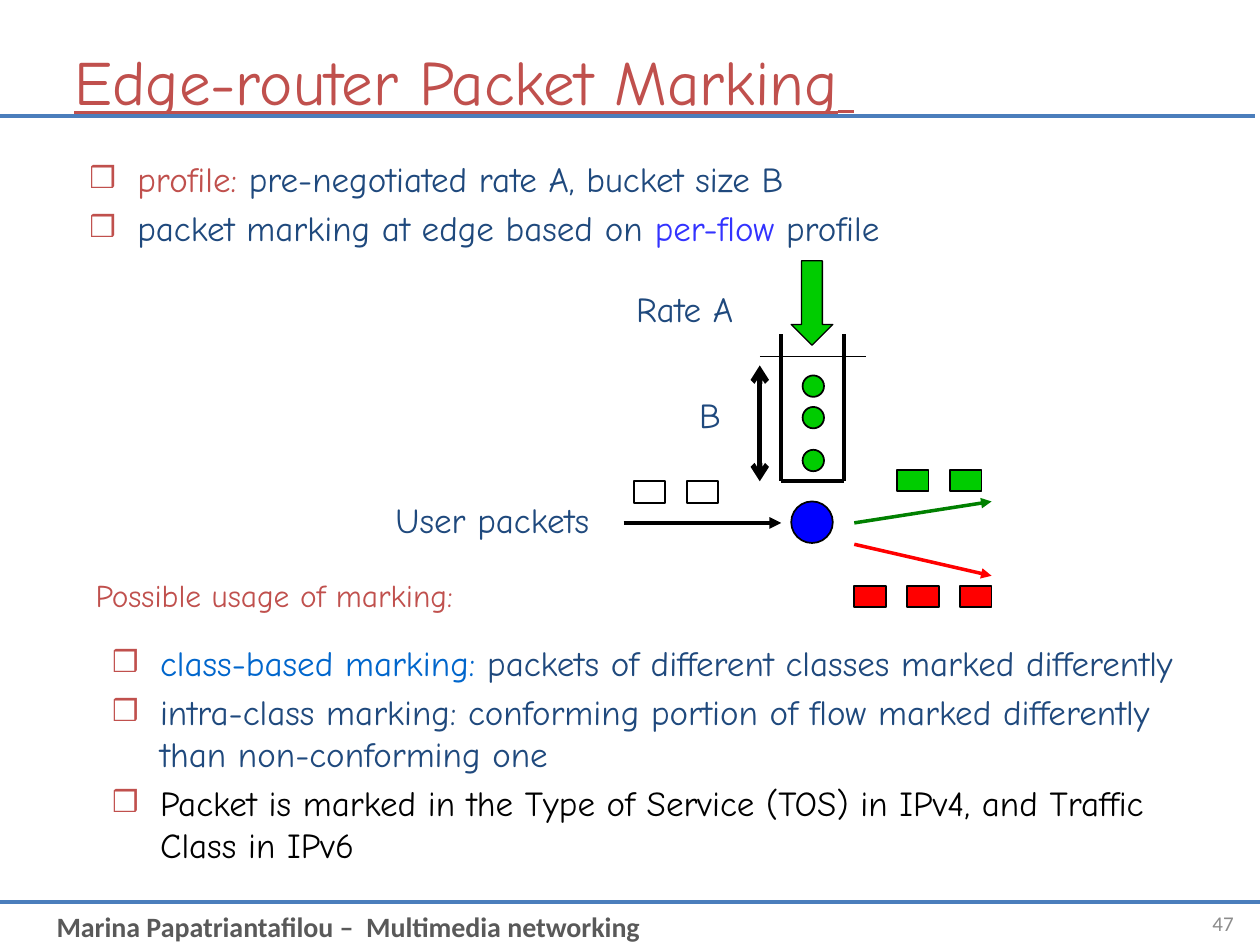
from dataclasses import dataclass

from lxml import etree
from pptx import Presentation
from pptx import util as u
from pptx.dml.color import RGBColor
from pptx.enum import shapes, text
from pptx.oxml import ns

HAND_FONT = "Comic Neue"
NAVY, BRICK, RULE_BLUE = "1F497D", "C0504D", "4B7EBC"
BLACK, GREEN, RED = "000000", "00CC00", "FF0000"
TWO_CONTENT_LAYOUT = 3


@dataclass
class Run:
    text: str
    color: str = NAVY
    size: float = 20
    font: str = HAND_FONT
    bold: bool = False
    underline: bool = False


@dataclass
class Label:
    box: tuple
    run: Run
    align: text.PP_ALIGN = text.PP_ALIGN.LEFT
    anchor: text.MSO_ANCHOR = text.MSO_ANCHOR.TOP


@dataclass
class Line:
    start: tuple
    end: tuple
    color: str = BLACK
    width: float = 2.25
    head: str = ""
    tail: str = ""


@dataclass
class PacketRow:
    left: float
    top: float
    count: int
    color: str


def rgb(color: str) -> RGBColor:
    return RGBColor.from_string(color)


def place(shape, box: tuple) -> None:
    shape.left, shape.top, shape.width, shape.height = map(u.Inches, box)


def add_run(paragraph, item: Run) -> None:
    run = paragraph.add_run()
    run.text = item.text
    run.font.name = item.font
    run.font.size = u.Pt(item.size)
    run.font.bold = item.bold
    run.font.underline = item.underline
    run.font.color.rgb = rgb(item.color)


def add_label(slide, label: Label) -> None:
    frame = slide.shapes.add_textbox(*map(u.Inches, label.box)).text_frame
    frame.word_wrap = True
    frame.vertical_anchor = label.anchor
    frame.paragraphs[0].alignment = label.align
    add_run(frame.paragraphs[0], label.run)


def add_bullet(paragraph) -> None:
    properties = paragraph._p.get_or_add_pPr()
    indent = u.Inches(0.38)
    properties.set("marL", str(indent))
    properties.set("indent", str(-indent))
    color = etree.SubElement(properties, ns.qn("a:buClr"))
    etree.SubElement(color, ns.qn("a:srgbClr"), val=BRICK)
    etree.SubElement(properties, ns.qn("a:buSzPct"), val="85000")
    etree.SubElement(properties, ns.qn("a:buChar"), char="❒")


def fill_list(placeholder, box: tuple, items: list) -> None:
    place(placeholder, box)
    frame = placeholder.text_frame
    frame.auto_size = text.MSO_AUTO_SIZE.NONE
    for index, runs in enumerate(items):
        paragraph = frame.add_paragraph() if index else frame.paragraphs[0]
        paragraph.space_before = u.Pt(4)
        add_bullet(paragraph)
        for run in runs:
            add_run(paragraph, run)


def add_line(slide, line: Line) -> None:
    connector = slide.shapes.add_connector(
        shapes.MSO_CONNECTOR.STRAIGHT, *map(u.Inches, line.start + line.end))
    connector.line.color.rgb = rgb(line.color)
    connector.line.width = u.Pt(line.width)
    outline = connector.line._get_or_add_ln()
    for tag, kind in (("a:headEnd", line.head), ("a:tailEnd", line.tail)):
        if kind:
            etree.SubElement(outline, ns.qn(tag), type=kind)
    etree.SubElement(connector._element.spPr, ns.qn("a:effectLst"))


def add_figure(slide, kind, box: tuple, color: str, width: float = 1) -> None:
    shape = slide.shapes.add_shape(kind, *map(u.Inches, box))
    shape.shadow.inherit = False
    shape.fill.solid()
    shape.fill.fore_color.rgb = rgb(color)
    shape.line.color.rgb = rgb(BLACK)
    shape.line.width = u.Pt(width)


TOP_ITEMS = [
    [Run("profile: ", BRICK), Run("pre-negotiated rate A, bucket size B")],
    [Run("packet marking at edge based on "), Run("per-flow", "3333FF"), Run(" profile")],
]
USAGE_ITEMS = [
    [Run("class-based marking:", "0066CC"),
     Run(" packets of different classes marked differently")],
    [Run("intra-class marking: conforming portion of flow marked differently "
         "than non-conforming one")],
    [Run("Packet is marked in the Type of Service (TOS) in IPv4, and Traffic "
         "Class in IPv6", BLACK)],
]
LABELS = [
    Label((0.35, 7.17, 9.25, 0.37),
          Run("Marina Papatriantafilou –  Multimedia networking", "595959", 16, "Calibri", True)),
    Label((9.09, 7.13, 0.8, 0.4), Run("47", "8C8C8C", 12, "Calibri"),
          text.PP_ALIGN.RIGHT, text.MSO_ANCHOR.MIDDLE),
    Label((0.66, 4.52, 4.92, 0.5), Run("Possible usage of marking:", BRICK, 18)),
    Label((3.04, 3.91, 2.33, 0.43), Run("User packets")),
    Label((4.95, 2.23, 1.25, 0.43), Run("Rate A")),
    Label((5.45, 3.07, 0.38, 0.43), Run("B")),
]
RULES = [
    Line((0, 7.16), (10, 7.16), RULE_BLUE),
    Line((-0.04, 0.92), (9.96, 0.92), RULE_BLUE),
]
BUCKET_LEFT, BUCKET_RIGHT, BUCKET_BOTTOM = 6.2, 6.7, 3.82
BUCKET_SIDES = [
    Line((x, start), (x, end), width=width)
    for x in (BUCKET_LEFT, BUCKET_RIGHT)
    for start, end, width in ((3.07, BUCKET_BOTTOM, 2.25), (3.07, 2.65, 2))
]
DIAGRAM_LINES = BUCKET_SIDES + [
    Line((BUCKET_LEFT, BUCKET_BOTTOM), (BUCKET_RIGHT, BUCKET_BOTTOM)),
    Line((6.03, 2.83), (6.87, 2.83), width=0.75),
    Line((6.03, 2.9), (6.03, BUCKET_BOTTOM), width=3, head="arrow", tail="arrow"),
    Line((4.95, 4.15), (6.2, 4.15), tail="triangle"),
    Line((6.78, 4.32), (7.87, 4.57), RED, 2, tail="triangle"),
    Line((6.78, 4.15), (7.87, 3.98), "008000", 2, tail="triangle"),
]
PACKET_ROWS = [
    PacketRow(5.03, 3.82, 2, "FFFFFF"),
    PacketRow(7.12, 3.73, 2, GREEN),
    PacketRow(6.78, 4.65, 3, RED),
]
PACKET_PITCH = 0.42
TOKEN_TOPS = (2.98, 3.23, 3.57)


def main() -> None:
    presentation = Presentation()
    presentation.slide_width, presentation.slide_height = u.Inches(10), u.Inches(7.5)
    slide = presentation.slides.add_slide(presentation.slide_layouts[TWO_CONTENT_LAYOUT])

    # Rules behind the title and above the footer
    for line in RULES:
        add_line(slide, line)

    # Title and the two lists
    title = slide.shapes.title
    place(title, (0.49, 0.26, 8.5, 0.75))
    title.text_frame.auto_size = text.MSO_AUTO_SIZE.NONE
    title.text_frame.vertical_anchor = text.MSO_ANCHOR.MIDDLE
    heading = title.text_frame.paragraphs[0]
    heading.alignment = text.PP_ALIGN.LEFT
    add_run(heading, Run("Edge-router Packet Marking", BRICK, 36, underline=True))
    add_run(heading, Run(" ", BRICK, 28, underline=True))
    fill_list(slide.placeholders[1], (0.61, 1.2, 8.75, 1), TOP_ITEMS)
    fill_list(slide.placeholders[2], (0.79, 5.04, 9, 2), USAGE_ITEMS)

    # Labels and footer
    for label in LABELS:
        add_label(slide, label)

    # Token bucket and packet flow
    for line in DIAGRAM_LINES:
        add_line(slide, line)
    for row in PACKET_ROWS:
        for index in range(row.count):
            box = (row.left + index * PACKET_PITCH, row.top, 0.25, 0.17)
            add_figure(slide, shapes.MSO_SHAPE.RECTANGLE, box, row.color)
    for top in TOKEN_TOPS:
        add_figure(slide, shapes.MSO_SHAPE.OVAL, (6.37, top, 0.17, 0.17), GREEN)
    add_figure(slide, shapes.MSO_SHAPE.OVAL, (6.28, 3.98, 0.33, 0.33), "0000FF")
    add_figure(slide, shapes.MSO_SHAPE.DOWN_ARROW, (6.28, 2.07, 0.33, 0.67), GREEN, 0.75)

    presentation.save("out.pptx")


if __name__ == "__main__":
    main()
